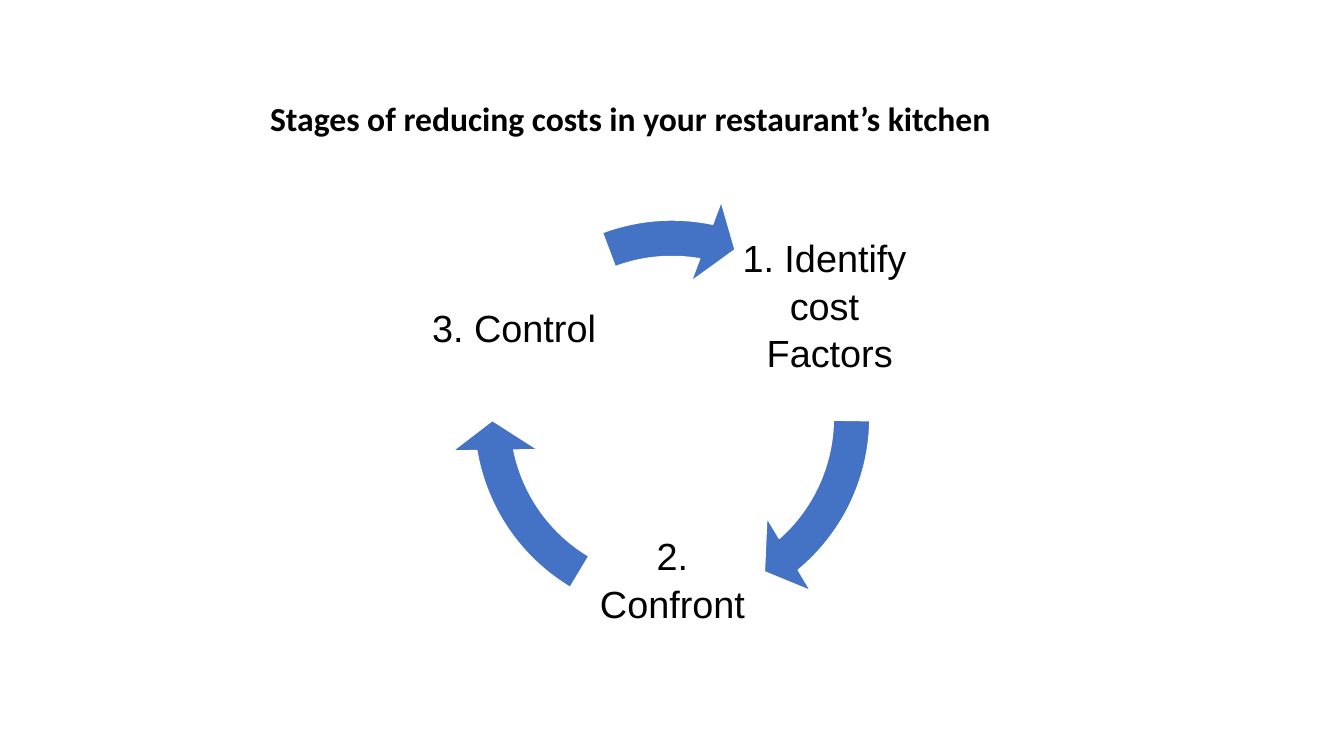
from pptx import Presentation
from pptx.dml.color import RGBColor
from pptx.enum.shapes import MSO_SHAPE
from pptx.enum.text import MSO_ANCHOR, PP_ALIGN
from pptx.util import Inches, Pt

THEME = {
    "text": RGBColor(0, 0, 0),
    "arrow": RGBColor(0x44, 0x72, 0xC4),
    "outline": RGBColor(0xFF, 0xFF, 0xFF),
    "title_font": "Calibri",
    "title_size": Pt(24),
    "stage_font": "Arial",
    "stage_size": Pt(27),
    "stage_spacing": 1.05,
}

presentation = Presentation()
presentation.slide_width = Inches(13.33)
presentation.slide_height = Inches(7.5)
slide = presentation.slides.add_slide(presentation.slide_layouts[6])

title = slide.shapes.add_textbox(Inches(2.58), Inches(0.92), Inches(7.54), Inches(0.5))
title.text_frame.word_wrap = True
paragraph = title.text_frame.paragraphs[0]
paragraph.text = "Stages of reducing costs in your restaurant’s kitchen"
paragraph.font.name = THEME["title_font"]
paragraph.font.size = THEME["title_size"]
paragraph.font.bold = True
paragraph.font.color.rgb = THEME["text"]

ring_size = Inches(4.41)
ring_left = (presentation.slide_width - ring_size) // 2
ring_top = Inches(1.94)
label_size = Inches(1.86)
inset = Inches(0.04)
line_height = Inches(0.45)

stages = [
    (["1. Identify ", "cost ", "Factors"], 7.3, 2.31, line_height, 29.663, 0.501),
    (["2. Confront"], 5.74, 5.03, line_height, 101.743, 72.581),
    (["3. Control"], 4.17, 2.31, 0, 168.59, 149.654),
]

for lines, left, top, space_below, arrow_end, arrow_start in stages:
    label = slide.shapes.add_textbox(Inches(left), Inches(top), label_size, label_size)
    frame = label.text_frame
    frame.word_wrap = True
    frame.vertical_anchor = MSO_ANCHOR.MIDDLE
    frame.margin_left = frame.margin_right = frame.margin_top = inset
    frame.margin_bottom = inset + space_below
    frame.text = "\n".join(lines)
    for paragraph in frame.paragraphs:
        paragraph.alignment = PP_ALIGN.CENTER
        paragraph.line_spacing = THEME["stage_spacing"]
        paragraph.font.name = THEME["stage_font"]
        paragraph.font.size = THEME["stage_size"]
        paragraph.font.color.rgb = THEME["text"]

    arrow = slide.shapes.add_shape(
        MSO_SHAPE.CIRCULAR_ARROW, ring_left, ring_top, ring_size, ring_size
    )
    for index, value in enumerate([0.082, 5.756, arrow_end, arrow_start, 0.096]):
        arrow.adjustments[index] = value
    arrow.shadow.inherit = False
    arrow.fill.solid()
    arrow.fill.fore_color.rgb = THEME["arrow"]
    arrow.line.color.rgb = THEME["outline"]
    arrow.line.width = Pt(1)

presentation.save("out.pptx")
